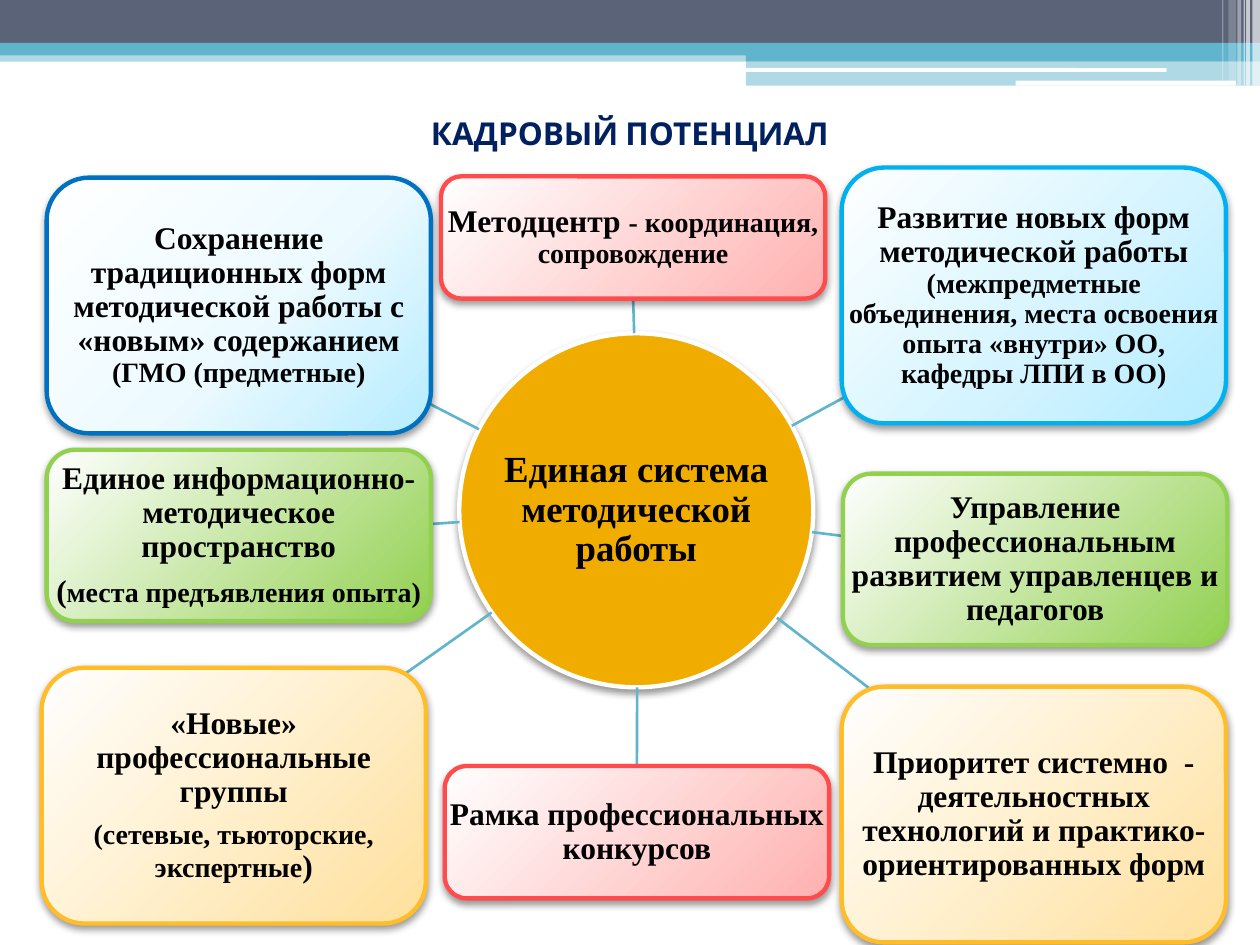
"""Build a slide with a hub of methodical work and eight linked directions."""
import copy
import math

from lxml import etree
from pptx import Presentation, util as u
from pptx.dml.color import RGBColor
from pptx.enum import shapes as kinds, text as txt
from pptx.oxml import parse_xml
from pptx.oxml.ns import nsdecls, qn

WHITE = RGBColor(0xFF, 0xFF, 0xFF)
BLACK = RGBColor(0x00, 0x00, 0x00)
NAVY = RGBColor(0x00, 0x20, 0x60)
SLATE = RGBColor(0x5A, 0x63, 0x78)
TEAL = RGBColor(0x60, 0xB5, 0xCC)
AMBER = RGBColor(0xF0, 0xAD, 0x00)
RED, PINK = RGBColor(0xFF, 0x4B, 0x4B), RGBColor(0xFF, 0xB1, 0xB0)
GREEN = RGBColor(0x92, 0xD0, 0x50)
GOLD, CREAM = RGBColor(0xFF, 0xBD, 0x29), RGBColor(0xFF, 0xE0, 0x9C)
SKY, BLUE = RGBColor(0x00, 0xB0, 0xF0), RGBColor(0x00, 0x70, 0xC0)
ICE, FROST = RGBColor(0xB5, 0xEC, 0xFF), RGBColor(0xED, 0xFA, 0xFF)
RECT = kinds.MSO_SHAPE.RECTANGLE
ROUNDED = kinds.MSO_SHAPE.ROUNDED_RECTANGLE
SHADOW = (f'<a:outerShdw {nsdecls("a")} blurRad="52070" dist="25400" dir="5400000" rotWithShape="0">'
          '<a:srgbClr val="000000"><a:alpha val="40000"/></a:srgbClr></a:outerShdw>')
RADIAL = (f'<a:path {nsdecls("a")} path="circle">'
          '<a:fillToRect l="-40000" t="-90000" r="140000" b="190000"/></a:path>')

deck = Presentation()
deck.slide_width, deck.slide_height = u.Inches(10), u.Inches(7.5)
COLUMN, ROW = deck.slide_width / 100, deck.slide_height / 75
slide = deck.slides.add_slide(deck.slide_layouts[5])


def add_block(outline, area, colour, opacity=100):
    left, top, width, height = area
    block = slide.shapes.add_shape(outline, round(left * COLUMN), round(top * ROW),
                                   round(width * COLUMN), round(height * ROW))
    block.shadow.inherit = False
    block.line.fill.background()
    block.fill.solid()
    block.fill.fore_color.rgb = colour
    if opacity < 100:
        tint = block.fill._xPr.find(qn("a:solidFill"))[0]
        etree.SubElement(tint, qn("a:alpha"), val=str(opacity * 1000))
    return block


def add_node(outline, area, colour, edge, paragraphs):
    node = add_block(outline, area, colour)
    node._element.spPr.find(qn("a:effectLst")).append(parse_xml(SHADOW))
    node.line.color.rgb = edge
    node.line.width = u.Pt(2.5)
    caption = slide.shapes.add_textbox(node.left, node.top, node.width, node.height).text_frame
    caption.word_wrap = True
    caption.vertical_anchor = txt.MSO_ANCHOR.MIDDLE
    caption.margin_left = caption.margin_right = u.Inches(0.01)
    caption.margin_top = caption.margin_bottom = u.Inches(0.01)
    for index, runs in enumerate(paragraphs):
        paragraph = caption.add_paragraph() if index else caption.paragraphs[0]
        paragraph.alignment = txt.PP_ALIGN.CENTER
        paragraph.line_spacing = 0.9
        paragraph.space_after = u.Pt(6.3)
        for words, size in runs:
            run = paragraph.add_run()
            run.text = words
            run.font.name, run.font.size, run.font.bold = "Times New Roman", u.Pt(size), True
            run.font.color.rgb = BLACK
    return node


header = [
    (RECT, (0, 4, 100, 0.9), TEAL, 50),
    (RECT, (0, 0, 100, 3.4), SLATE, 100),
    (RECT, (0, 3.4, 100, 1), TEAL, 100),
    (RECT, (59.2, 3.9, 40.8, 0.95), TEAL, 100),
    (RECT, (59.2, 4.85, 40.8, 1.95), TEAL, 50),
    (ROUNDED, (59.1, 5.4, 33.5, 0.3), WHITE, 100),
    (ROUNDED, (80.6, 6.4, 17.5, 0.4), WHITE, 100),
]
stripes = [(99.4, 0.6, 6.8, 65), (98.9, 0.3, 6.8, 65), (98.7, 0.1, 6.8, 60),
           (98.2, 0.3, 6.8, 40), (97.5, 0.6, 6.4, 20), (97, 0.1, 6.4, 30)]
for band in header:
    add_block(*band)
for left, width, height, opacity in stripes:
    add_block(RECT, (left, 0, width, height), WHITE, opacity)

heading = slide.shapes.title
heading.left, heading.top = 0, round(4.7 * ROW)
heading.width, heading.height = deck.slide_width, round(11.7 * ROW)
heading.text_frame.vertical_anchor = txt.MSO_ANCHOR.MIDDLE
heading_line = heading.text_frame.paragraphs[0]
heading_line.alignment = txt.PP_ALIGN.CENTER
heading_run = heading_line.add_run()
heading_run.text = "КАДРОВЫЙ ПОТЕНЦИАЛ"
heading_run.font.name, heading_run.font.size, heading_run.font.bold = "Cabin", u.Pt(18), True
heading_run.font.color.rgb = NAVY

HUB_X, HUB_Y, RADIUS = 50.5, 40.5, 14.05
add_node(kinds.MSO_SHAPE.OVAL, (HUB_X - RADIUS, HUB_Y - RADIUS, 2 * RADIUS, 2 * RADIUS),
         AMBER, WHITE, [[("Единая система методической работы", 21)]])

WIDTH, TALL, MEDIUM = 30.5, 20.3, 13.6
directions = [
    (35, 14, 9.7, (50.3, 23.7), 2, RED, PINK,
     [[("Методцентр ", 18), ("- координация, сопровождение", 16)]]),
    (35.3, 60.8, 10.5, (50.6, 60.8), 0, RED, PINK,
     [[("Рамка профессиональных конкурсов", 18)]]),
    (66.9, 37.6, MEDIUM, (67.4, 42.6), None, GREEN, GREEN,
     [[("Управление профессиональным развитием управленцев и педагогов", 18)]]),
    (66.8, 54.5, TALL, (72.1, 57), None, GOLD, CREAM,
     [[("Приоритет системно  - деятельностных технологий и практико-ориентированных форм", 18)]]),
    (66.8, 13.3, TALL, (70.2, 29.8), None, SKY, ICE,
     [[("Развитие новых форм методической работы ", 18),
       ("(межпредметные объединения, места освоения опыта «внутри» ОО, кафедры ЛПИ в ОО)", 16)]]),
    (3.3, 53, TALL, (29, 55.7), None, GOLD, CREAM,
     [[("«Новые» профессиональные группы", 18)],
      [("(сетевые, тьюторские, экспертные", 16), (")", 18)]]),
    (3.7, 14.1, TALL, (30.9, 30.4), None, BLUE, ICE,
     [[("Сохранение традиционных форм методической работы с «новым» содержанием ", 18),
       ("(ГМО (предметные)", 16)]]),
    (3.7, 35.7, MEDIUM, (34, 41.6), None, GREEN, GREEN,
     [[("Единое информационно-методическое пространство", 18)],
      [("(", 18), ("места предъявления опыта)", 16)]]),
]
for left, top, height, (end_x, end_y), side, edge, tone, paragraphs in directions:
    direction = add_node(ROUNDED, (left, top, WIDTH, height), tone, edge, paragraphs)
    direction.fill.gradient()
    stops = direction.fill.gradient_stops
    for stop, shade, position in zip(stops, (WHITE, tone), (0, 1)):
        stop.color.rgb, stop.position = shade, position
    gradient = direction._element.spPr.find(qn("a:gradFill"))
    if edge == BLUE:
        first = gradient.find(qn("a:gsLst"))[0]
        first.addnext(copy.deepcopy(first))
        middle = direction.fill.gradient_stops[1]
        middle.color.rgb, middle.position = FROST, 0.55
    gradient.replace(gradient.find(qn("a:lin")), parse_xml(RADIAL))

    angle = math.atan2(end_y - HUB_Y, end_x - HUB_X)
    spoke = slide.shapes.add_connector(
        kinds.MSO_CONNECTOR.STRAIGHT,
        round((HUB_X + RADIUS * math.cos(angle)) * COLUMN),
        round((HUB_Y + RADIUS * math.sin(angle)) * ROW),
        round(end_x * COLUMN), round(end_y * ROW))
    if side is not None:
        spoke.end_connect(direction, side)
    spoke.line.color.rgb = TEAL
    spoke.line.width = u.Pt(1.5)
    etree.SubElement(spoke._element.spPr, qn("a:effectLst"))
    direction._element.addprevious(spoke._element)

deck.save("out.pptx")
